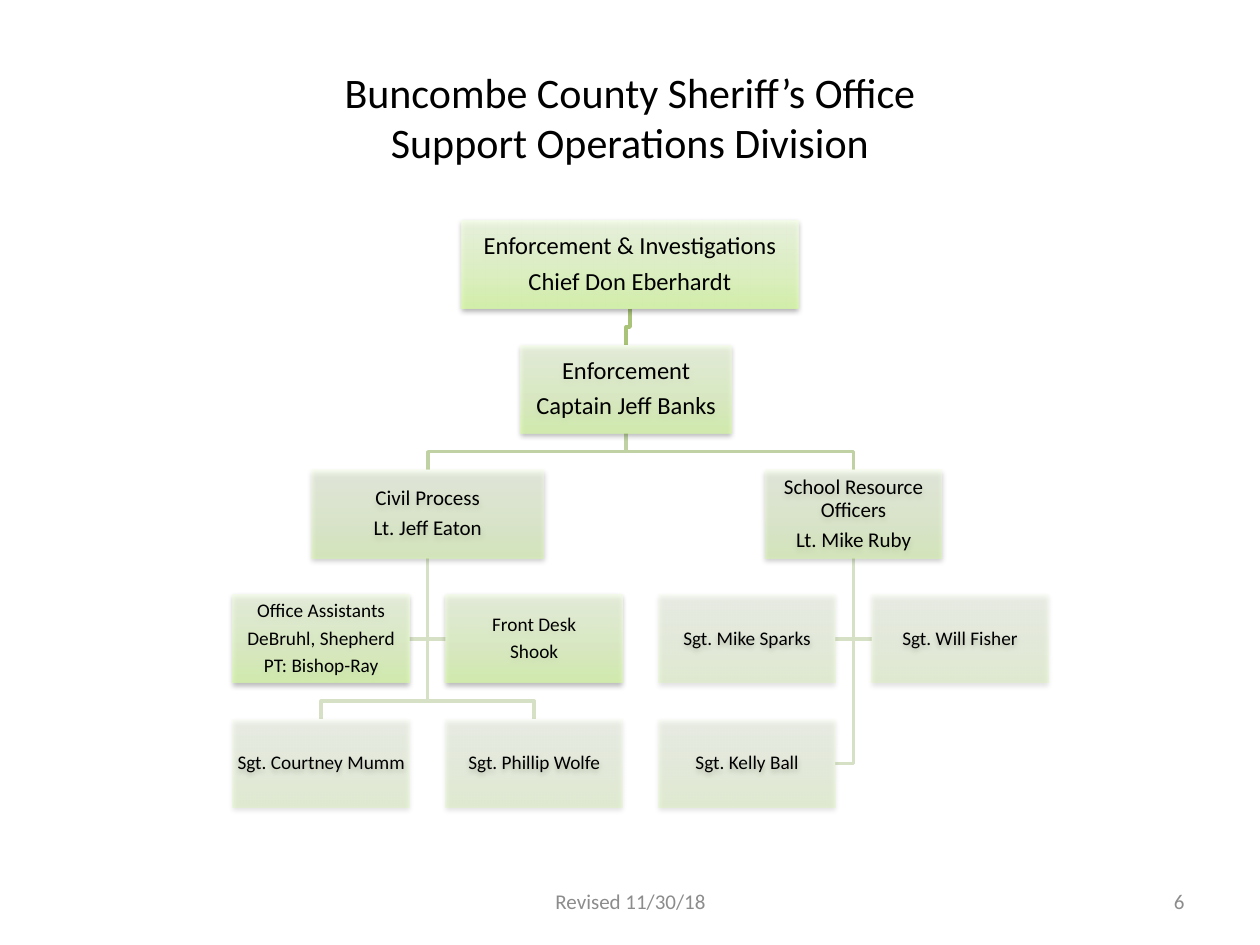
from dataclasses import dataclass

from lxml import etree
from pptx import Presentation
from pptx.dml.color import RGBColor
from pptx.enum.shapes import MSO_SHAPE
from pptx.enum.text import MSO_ANCHOR as ANCHOR, PP_ALIGN as ALIGN
from pptx.oxml import parse_xml
from pptx.oxml.ns import nsdecls, qn
from pptx.util import Inches, Pt

BLACK = RGBColor(0x00, 0x00, 0x00)
GREY = RGBColor(0x8C, 0x8C, 0x8C)
CHIEF_LINE = RGBColor(0xA9, 0xC3, 0x79)
UNIT_LINE = RGBColor(0xC0, 0xD2, 0xA4)
STAFF_LINE = RGBColor(0xD5, 0xE0, 0xC4)
GRADIENT = ((0, RGBColor(0xDA, 0xFD, 0xA7)),
            (35, RGBColor(0xE4, 0xFC, 0xC2)),
            (100, RGBColor(0xF5, 0xFF, 0xE7)))

FONT = "Calibri"
BOX_W, BOX_H = 1.4, 0.7
COL_STEP, ROW_STEP = 1.69, 0.99
INSET = 0.01


@dataclass
class Post:
    """A box of the chart; x is its centre, y its top, from the chart's corner."""
    x: float
    row: int
    width: float
    size: int
    opacity: int
    lines: tuple

    @property
    def y(self):
        return self.row * ROW_STEP


def column(n):
    return BOX_W / 2 + n * COL_STEP


POSTS = {
    "chief": Post(3.15, 0, 2.67, 14, 80,
                  ("Enforcement & Investigations", "Chief Don Eberhardt")),
    "captain": Post(3.12, 1, 1.67, 14, 70, ("Enforcement", "Captain Jeff Banks")),
    "civil": Post(column(0.5), 2, 1.84, 12, 50, ("Civil Process", "Lt. Jeff Eaton")),
    "school": Post(column(2.5), 2, BOX_W, 12, 50,
                   ("School Resource Officers", "Lt. Mike Ruby")),
    "assistants": Post(column(0), 3, BOX_W, 11, 70,
                       ("Office Assistants", "DeBruhl, Shepherd", "PT: Bishop-Ray")),
    "desk": Post(column(1), 3, BOX_W, 11, 70, ("Front Desk", "Shook")),
    "sparks": Post(column(2), 3, BOX_W, 11, 30, ("Sgt. Mike Sparks",)),
    "fisher": Post(column(3), 3, BOX_W, 11, 30, ("Sgt. Will Fisher",)),
    "mumm": Post(column(0), 4, BOX_W, 11, 30, ("Sgt. Courtney Mumm",)),
    "wolfe": Post(column(1), 4, BOX_W, 11, 30, ("Sgt. Phillip Wolfe",)),
    "ball": Post(column(2), 4, BOX_W, 11, 30, ("Sgt. Kelly Ball",)),
}

# parent, children joined from above, children joined from the side, line colour
LINKS = (
    ("school", (), ("ball", "fisher", "sparks"), STAFF_LINE),
    ("civil", ("wolfe", "mumm"), ("desk", "assistants"), STAFF_LINE),
    ("captain", ("school", "civil"), (), UNIT_LINE),
    ("chief", ("captain",), (), CHIEF_LINE),
)


def apply(obj, **values):
    for name, value in values.items():
        setattr(obj, name, value)


def write(tf, lines, size, color, align, **para_format):
    tf.word_wrap = True
    tf.vertical_anchor = ANCHOR.MIDDLE
    for i, line in enumerate(lines):
        p = tf.paragraphs[0] if i == 0 else tf.add_paragraph()
        p.text = line
        apply(p, alignment=align, **para_format)
        for r in p.runs:
            apply(r.font, name=FONT, size=Pt(size))
            r.font.color.rgb = color


def add_text(slide, box, text, size, color, align):
    tb = slide.shapes.add_textbox(*map(Inches, box))
    write(tb.text_frame, (text,), size, color, align)


def style_box(sp, opacity):
    """Give a shape the see-through gradient and the soft shadow below it."""
    stops = "".join(
        f'<a:gs pos="{pos * 1000}"><a:srgbClr val="{color}">'
        f'<a:alpha val="{opacity * 1000}"/></a:srgbClr></a:gs>'
        for pos, color in GRADIENT)
    fill = parse_xml(
        f'<a:gradFill {nsdecls("a")} rotWithShape="1"><a:gsLst>{stops}</a:gsLst>'
        '<a:lin ang="16200000" scaled="0"/></a:gradFill>')
    sp.shadow.inherit = False
    sp.line.fill.background()
    props = sp._element.spPr
    props.find(qn("a:prstGeom")).addnext(fill)
    shadow = etree.SubElement(props.find(qn("a:effectLst")), qn("a:outerShdw"),
                              blurRad="40000", dist="20000", dir="5400000",
                              rotWithShape="0")
    color = etree.SubElement(shadow, qn("a:srgbClr"), val="000000")
    etree.SubElement(color, qn("a:alpha"), val="38000")


def add_post(slide, left, top, post):
    sp = slide.shapes.add_shape(
        MSO_SHAPE.RECTANGLE, Inches(left + post.x - post.width / 2),
        Inches(top + post.y), Inches(post.width), Inches(BOX_H))
    style_box(sp, post.opacity)
    tf = sp.text_frame
    apply(tf, **{f"margin_{side}": Inches(INSET)
                 for side in ("left", "top", "right", "bottom")})
    write(tf, post.lines, post.size, BLACK, ALIGN.CENTER,
          line_spacing=0.9, space_after=Pt(round(post.size * 0.35, 1)))


def add_link(slide, left, top, points, color):
    start, *rest = [(Inches(left + x), Inches(top + y)) for x, y in points]
    builder = slide.shapes.build_freeform(*start)
    builder.add_line_segments(rest, close=False)
    sp = builder.convert_to_shape()
    sp.shadow.inherit = False
    sp.fill.background()
    sp.line.color.rgb = color
    sp.line.width = Pt(2)


def route_from_above(parent, child):
    bend = child.y - (ROW_STEP - BOX_H) / 2
    return ((parent.x, parent.y + BOX_H), (parent.x, bend),
            (child.x, bend), (child.x, child.y))


def route_from_side(parent, child):
    middle = child.y + BOX_H / 2
    half = child.width / 2
    edge = child.x + (half if child.x < parent.x else -half)
    return (parent.x, parent.y + BOX_H), (parent.x, middle), (edge, middle)


def add_org_chart(slide, left, top):
    for parent, below, beside, color in LINKS:
        for children, route in ((beside, route_from_side), (below, route_from_above)):
            for child in children:
                points = route(POSTS[parent], POSTS[child])
                add_link(slide, left, top, points, color)
    for post in POSTS.values():
        add_post(slide, left, top, post)


def add_footer(slide, top, height):
    add_text(slide, (3.42, top, 3.17, height), "Revised 11/30/18", 12, GREY, ALIGN.CENTER)
    add_text(slide, (7.17, top, 2.33, height), "6", 12, GREY, ALIGN.RIGHT)


def main():
    prs = Presentation()
    apply(prs, slide_width=Inches(10), slide_height=Inches(7.5))
    slide = prs.slides.add_slide(prs.slide_layouts[6])
    add_text(slide, (0.5, 0.3, 9, 1.25),
             "Buncombe County Sheriff’s Office\vSupport Operations Division",
             24, BLACK, ALIGN.CENTER)
    add_org_chart(slide, 1.85, 1.75)
    add_footer(slide, 6.95, 0.4)
    prs.save("out.pptx")


if __name__ == "__main__":
    main()
